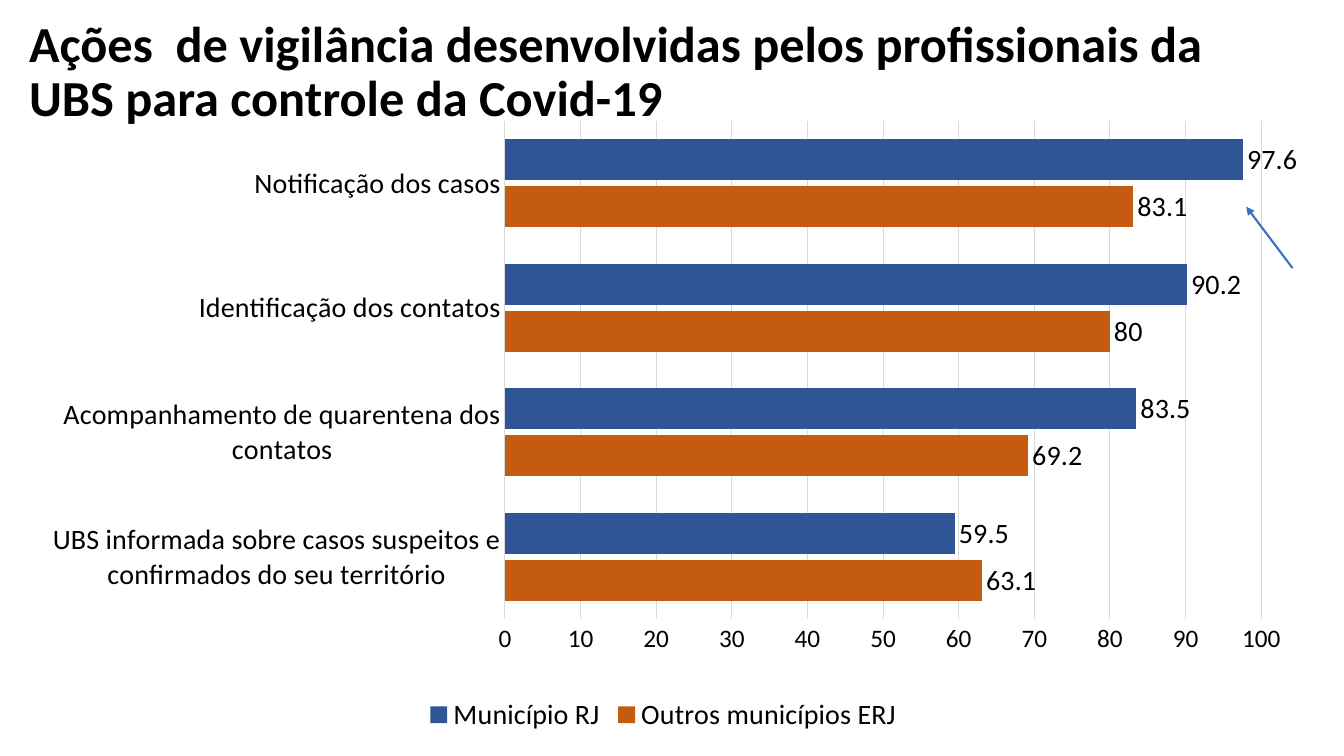
import pptx
import pptx.chart.data
import pptx.dml.color
import pptx.enum.chart
import pptx.enum.shapes
import pptx.enum.text
import pptx.oxml
import pptx.oxml.ns
import pptx.util
from lxml import etree

COLORS = {"text": "000000", "grid": "D9D9D9", "rj": "2F5597", "erj": "C55A11", "arrow": "3F6FC3"}
FONT = "Calibri"
W, H = pptx.util.Inches(13.33), pptx.util.Inches(7.5)
LEFT, WIDTH = pptx.util.Inches(0.19), pptx.util.Inches(12.78)


def rgb(name):
    return pptx.dml.color.RGBColor.from_string(COLORS[name])


def style_font(font, size):
    font.name = FONT
    font.size = pptx.util.Pt(size)
    font.color.rgb = rgb("text")


prs = pptx.Presentation()
prs.slide_width, prs.slide_height = W, H
s = prs.slides.add_slide(prs.slide_layouts[6])

title = s.shapes.add_textbox(LEFT, 0, WIDTH, pptx.util.Inches(1.45))
tf = title.text_frame
tf.word_wrap = True
tf.vertical_anchor = pptx.enum.text.MSO_ANCHOR.MIDDLE
p = tf.paragraphs[0]
p.text = "Ações  de vigilância desenvolvidas pelos profissionais da UBS para controle da Covid-19"
p.line_spacing = 0.9
style_font(p.font, 36)
p.font.bold = True

data = pptx.chart.data.CategoryChartData()
data.categories = [
    "UBS informada sobre casos suspeitos e confirmados do seu território",
    "Acompanhamento de quarentena dos contatos",
    "Identificação dos contatos",
    "Notificação dos casos",
]
data.add_series("Outros municípios ERJ", [63.1, 69.2, 80, 83.1])
data.add_series("Município RJ", [59.5, 83.5, 90.2, 97.6])
chart = s.shapes.add_chart(
    pptx.enum.chart.XL_CHART_TYPE.BAR_CLUSTERED,
    LEFT, pptx.util.Inches(1.05), WIDTH, pptx.util.Inches(6.27), data,
).chart
style_font(chart.font, 10)
chart.has_title = False

chart.has_legend = True
chart.legend.position = pptx.enum.chart.XL_LEGEND_POSITION.BOTTOM
chart.legend.include_in_layout = False
style_font(chart.legend.font, 20)

plot = chart.plots[0]
plot.gap_width, plot.overlap = 90, -15
plot.vary_by_categories = False
for series, color in zip(plot.series, ("erj", "rj")):
    series.format.fill.solid()
    series.format.fill.fore_color.rgb = rgb(color)
    labels = series.data_labels
    labels.show_value = True
    labels.position = pptx.enum.chart.XL_LABEL_POSITION.OUTSIDE_END
    style_font(labels.font, 20)

cat, val = chart.category_axis, chart.value_axis
for axis, size in ((cat, 20), (val, 18)):
    axis.major_tick_mark = axis.minor_tick_mark = pptx.enum.chart.XL_TICK_MARK.NONE
    style_font(axis.tick_labels.font, size)
val.minimum_scale, val.maximum_scale, val.major_unit = 0, 100, 10
val.format.line.fill.background()
for line in (cat.format.line, val.major_gridlines.format.line):
    line.color.rgb = rgb("grid")
    line.width = pptx.util.Pt(0.75)

area = chart._chartSpace.chart.plotArea
for old in area.findall(pptx.oxml.ns.qn("c:layout")):
    area.remove(old)
layout = etree.Element(pptx.oxml.ns.qn("c:layout"))
manual = etree.SubElement(layout, pptx.oxml.ns.qn("c:manualLayout"))
for tag, value in (
    ("layoutTarget", "inner"), ("xMode", "edge"), ("yMode", "edge"),
    ("x", "0.377"), ("y", "0.024"), ("w", "0.587"), ("h", "0.788"),
):
    etree.SubElement(manual, pptx.oxml.ns.qn(f"c:{tag}")).set("val", value)
area.insert(0, layout)

arrow = s.shapes.add_connector(
    pptx.enum.shapes.MSO_CONNECTOR.STRAIGHT,
    *(pptx.util.Inches(v) for v in (12.82, 2.66, 12.36, 2.05)),
)
arrow.line.color.rgb = rgb("arrow")
arrow.line.width = pptx.util.Pt(1.5)
etree.SubElement(arrow.line._get_or_add_ln(), pptx.oxml.ns.qn("a:tailEnd")).set("type", "triangle")
etree.SubElement(arrow._element.spPr, pptx.oxml.ns.qn("a:effectLst"))

prs.save("out.pptx")
